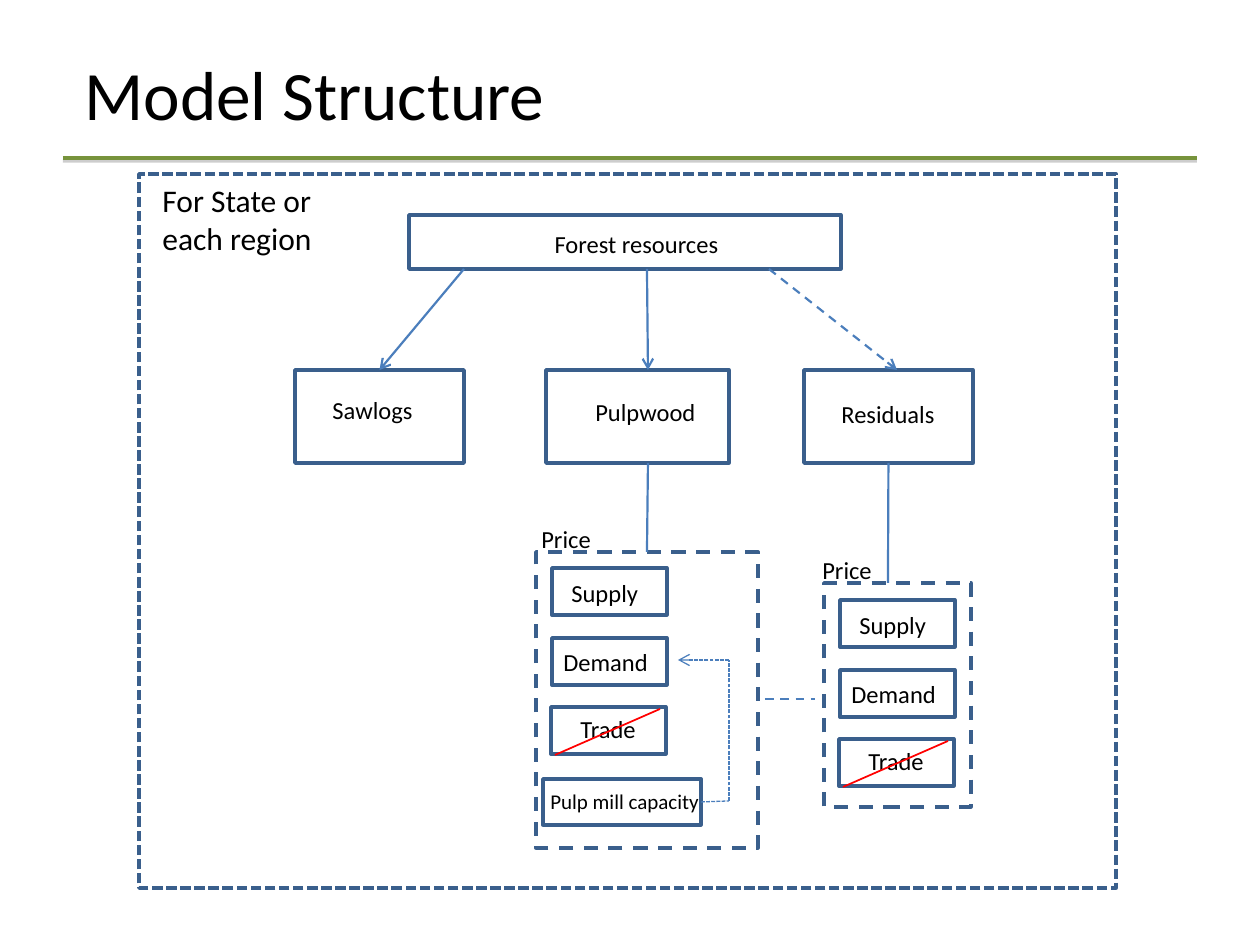
"""Build the Model Structure slide."""
from lxml.etree import SubElement
from pptx import Presentation
from pptx.dml.color import RGBColor
from pptx.enum.dml import MSO_LINE
from pptx.enum.shapes import MSO_CONNECTOR, MSO_SHAPE
from pptx.enum.text import PP_ALIGN
from pptx.oxml.ns import qn
from pptx.util import Pt

PX = 7257
HUES = {"text": "000000", "box": "3A5F8C", "link": "4B7EBC",
        "cross": "FF0000", "rule": "77933C", "shade": "808080"}
DASH, DOTS = MSO_LINE.DASH, MSO_LINE.SQUARE_DOT

deck = Presentation()
deck.slide_width, deck.slide_height = 1260 * PX, 945 * PX
slide = deck.slides.add_slide(deck.slide_layouts[6])
shapes = slide.shapes


def box(left, top, width, height, dash=None):
    shape = shapes.add_shape(MSO_SHAPE.RECTANGLE, left * PX, top * PX, width * PX, height * PX)
    shape.shadow.inherit = False
    shape.fill.background()
    shape.line.color.rgb = RGBColor.from_string(HUES["box"])
    shape.line.width = Pt(2)
    shape.line.dash_style = dash
    return shape


def label(text, left, top, width, height, size=14, align=PP_ALIGN.LEFT):
    frame = shapes.add_textbox(left * PX, top * PX, width * PX, height * PX).text_frame
    frame.word_wrap = True
    para = frame.paragraphs[0]
    para.alignment = align
    run = para.add_run()
    run.text = text
    run.font.name = "Calibri"
    run.font.size = Pt(size)
    run.font.color.rgb = RGBColor.from_string(HUES["text"])


label("Model Structure", 72, 45, 1134, 47, 39.6)
box(139, 174, 977, 714, DOTS)
label("For State or each region", 150, 175, 181, 84, 18)
box(409, 215, 432, 54)
label("Forest resources", 442, 223, 389, 40, align=PP_ALIGN.CENTER)

saw = box(295, 370, 169, 93)
box(546, 370, 183, 93)
waste = box(804, 370, 169, 93)
label("Sawlogs", 320, 389, 147, 40)
label("Pulpwood", 583, 391, 136, 40)
label("Residuals", 829, 393, 130, 43)

pulp = box(536, 552, 222, 296, DASH)
box(824, 583, 147, 224, DASH)
label("Price", 529, 518, 101, 40)
label("Price", 810, 549, 101, 40)
mill = box(543, 779, 158, 46)
label("Pulp mill capacity", 538, 782, 178, 37, 12)

# kind, start, end, width, dash, arrow, start joint, end joint
links = [
    ("rule", (63, 158), (1197, 158), 2, None, False, None, None),
    ("link", (464, 269), (379, 370), 1.25, None, True, None, (saw, 0)),
    ("link", (647, 269), (648, 370), 1.25, None, True, None, None),
    ("link", (769, 269), (897, 370), 1.25, DASH, True, None, None),
    ("link", (648, 463), (647, 552), 1.25, None, False, None, (pulp, 0)),
    ("link", (888, 463), (888, 583), 1.25, None, False, (waste, 2), None),
    ("link", (765, 699), (815, 699), 1.25, DASH, False, None, None),
    ("link", (701, 800), (729, 801), 0.75, DOTS, False, (mill, 3), None),
    ("link", (729, 801), (729, 660), 0.75, DOTS, False, None, None),
    ("link", (729, 660), (678, 660), 0.75, DOTS, True, None, None),
]

parts = [("Supply", 0, 0, 7, 4, 101), ("Demand", 0, 70, -1, 73, 116),
         ("Trade", -1, 139, 16, 140, 87)]
for left, top in [(552, 568), (840, 600)]:
    for name, dx, dy, tx, ty, width in parts:
        box(left + dx, top + dy, 115, 47)
        label(name, left + tx, top + ty, width, 40)
    links.append(("cross", (left + 3, top + 187), (left + 108, top + 141),
                  1, None, False, None, None))

for kind, start, end, width, dash, arrow, head, tail in links:
    link = shapes.add_connector(MSO_CONNECTOR.STRAIGHT, *[v * PX for v in start + end])
    if head:
        link.begin_connect(*head)
    if tail:
        link.end_connect(*tail)
    link.line.color.rgb = RGBColor.from_string(HUES[kind])
    link.line.width = Pt(width)
    link.line.dash_style = dash
    if arrow:
        SubElement(link.line._ln, qn("a:tailEnd"), type="arrow")
    effect = SubElement(link._element.spPr, qn("a:effectLst"))
    if kind == "rule":
        shade = SubElement(effect, qn("a:outerShdw"), dist="20320", dir="5400000")
        tone = SubElement(shade, qn("a:srgbClr"), val=HUES["shade"])
        SubElement(tone, qn("a:alpha"), val="38000")

deck.save("out.pptx")
